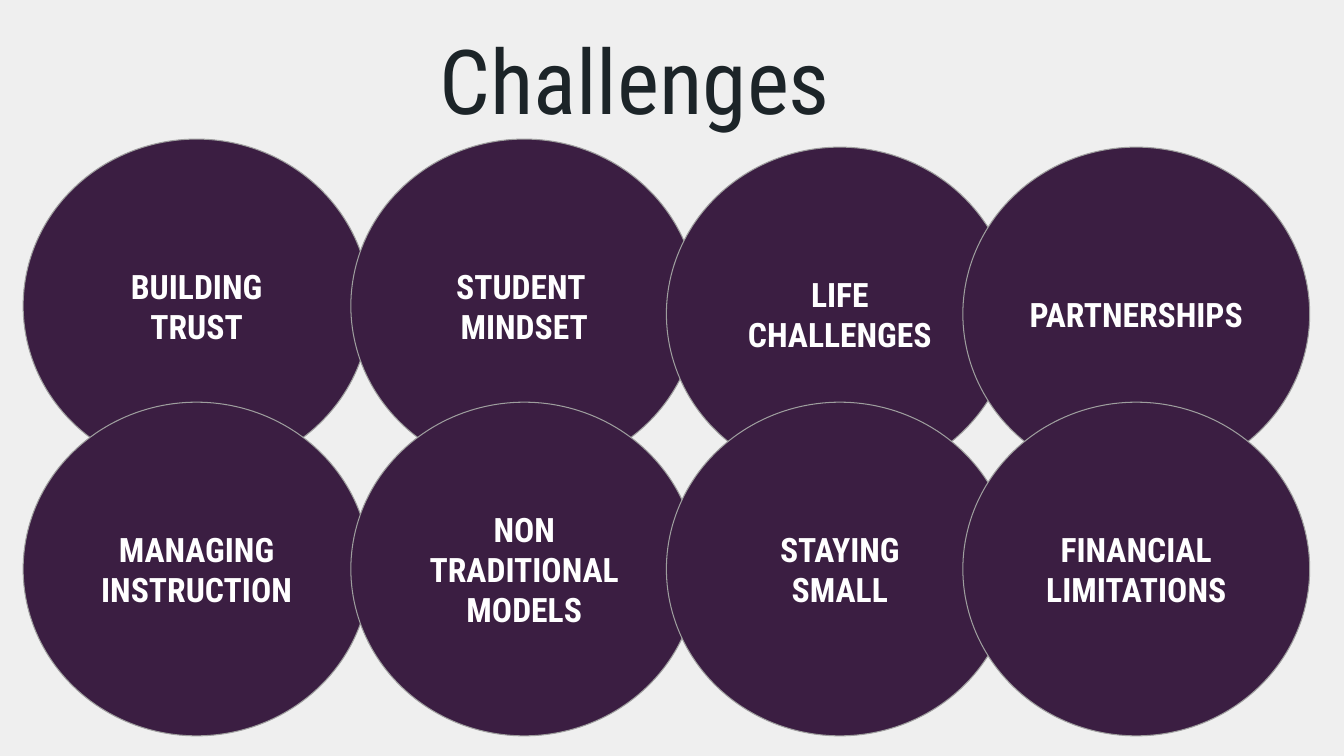
from dataclasses import dataclass

from pptx import Presentation
from pptx import util as u
from pptx.dml.color import RGBColor
from pptx.enum import shapes, text


@dataclass(frozen=True)
class Theme:
    font: str = "Roboto Condensed"
    background: str = "EFEFEF"
    ink: str = "1C2428"
    circle: str = "3B1E42"
    outline: str = "9E9E9E"
    label: str = "FFFFFF"
    title_size: int = 64
    label_size: int = 24
    outline_width: float = 0.75


THEME = Theme()

# Grid of circles, in inches
COLUMNS = (0.23, 3.48, 6.61, 9.55)
ROWS = (1.38, 3.99)
RIGHT_HALF_DROP = 0.08  # the last two circles of the top row sit lower
CIRCLE_SIZE = (3.44, 3.31)

# Each label is a list of paragraphs
CHALLENGES = (
    (["BUILDING TRUST"], ["STUDENT ", "MINDSET"],
     ["LIFE CHALLENGES"], ["PARTNERSHIPS"]),
    (["MANAGING INSTRUCTION"], ["NON", "TRADITIONAL", "MODELS"],
     ["STAYING SMALL"], ["FINANCIAL", "LIMITATIONS"]),
)


def color(code):
    return RGBColor.from_string(code)


def place(box, left, top, width, height):
    box.left, box.top = u.Inches(left), u.Inches(top)
    box.width, box.height = u.Inches(width), u.Inches(height)


def write(box, lines, *, size, ink, align, inset, bold=False):
    frame = box.text_frame
    frame.word_wrap = True
    frame.auto_size = text.MSO_AUTO_SIZE.NONE
    frame.vertical_anchor = text.MSO_ANCHOR.MIDDLE
    frame.margin_left = frame.margin_right = u.Inches(inset)
    frame.margin_top = frame.margin_bottom = u.Inches(inset)
    for number, line in enumerate(lines):
        para = frame.add_paragraph() if number else frame.paragraphs[0]
        para.alignment = align
        para.space_before = u.Pt(0)
        span = para.add_run()
        span.text = line
        span.font.name = THEME.font
        span.font.size = u.Pt(size)
        span.font.bold = bold
        span.font.color.rgb = color(ink)


def add_title(page, wording):
    box = page.shapes.title
    place(box, 4.26, 0.14, 4.87, 1.29)
    write(box, [wording], size=THEME.title_size, ink=THEME.ink,
          align=text.PP_ALIGN.LEFT, inset=0.1)


def add_circle(page, left, top, lines):
    bounds = [u.Inches(length) for length in (left, top, *CIRCLE_SIZE)]
    circle = page.shapes.add_shape(
        shapes.MSO_SHAPE.FLOWCHART_CONNECTOR, *bounds)
    circle.shadow.inherit = False
    circle.fill.solid()
    circle.fill.fore_color.rgb = color(THEME.circle)
    circle.line.color.rgb = color(THEME.outline)
    circle.line.width = u.Pt(THEME.outline_width)
    write(circle, lines, size=THEME.label_size, ink=THEME.label,
          align=text.PP_ALIGN.CENTER, inset=0.13, bold=True)


def main():
    deck = Presentation()
    deck.slide_width, deck.slide_height = u.Inches(13.33), u.Inches(7.5)
    page = deck.slides.add_slide(deck.slide_layouts.get_by_name("Title Only"))
    page.background.fill.solid()
    page.background.fill.fore_color.rgb = color(THEME.background)

    add_title(page, "Challenges")

    # Circles, row by row, so that later ones overlap earlier ones
    for row, labels in enumerate(CHALLENGES):
        for column, lines in enumerate(labels):
            drop = RIGHT_HALF_DROP if row == 0 and column >= 2 else 0
            add_circle(page, COLUMNS[column], ROWS[row] + drop, lines)

    deck.save("out.pptx")


if __name__ == "__main__":
    main()
